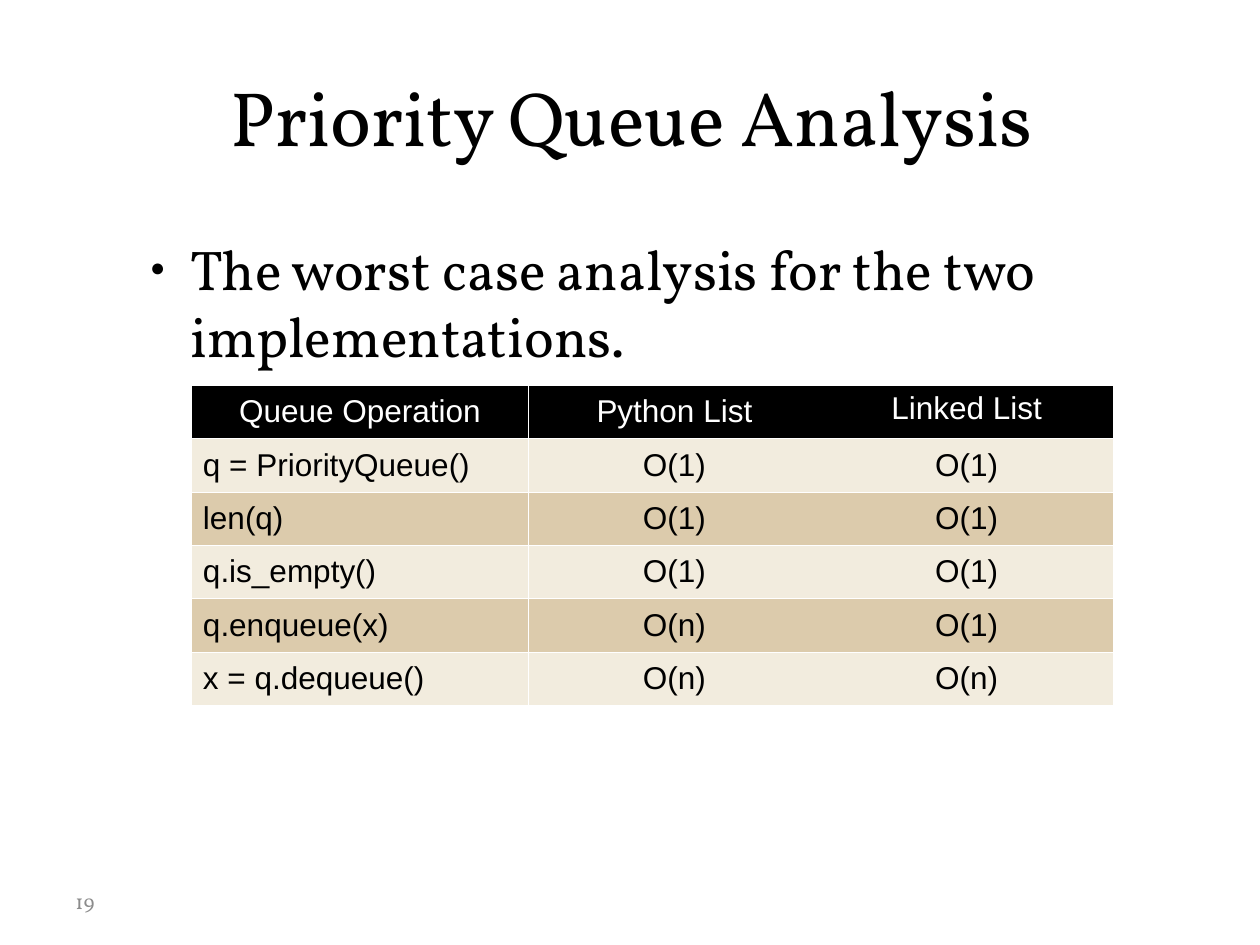
from lxml import etree
from pptx import Presentation
from pptx.dml.color import RGBColor
from pptx.enum import text
from pptx.oxml import ns
from pptx.util import Pt

BLACK = RGBColor(0x00, 0x00, 0x00)
WHITE = RGBColor(0xFF, 0xFF, 0xFF)
GREY = RGBColor(0x8C, 0x8C, 0x8C)
CREAM = RGBColor(0xF2, 0xEC, 0xDE)
TAN = RGBColor(0xDC, 0xCB, 0xAC)

OPERATIONS = [
    ("Queue Operation", "Python List", "Linked List"),
    ("q = PriorityQueue()", "O(1)", "O(1)"),
    ("len(q)", "O(1)", "O(1)"),
    ("q.is_empty()", "O(1)", "O(1)"),
    ("q.enqueue(x)", "O(n)", "O(1)"),
    ("x = q.dequeue()", "O(n)", "O(n)"),
]


def add_xml(parent, tag, **attributes):
    return etree.SubElement(parent, ns.qn(tag), attributes)


class SlideBuilder:
    serif = "Vollkorn"
    sans = "Arial"
    border_width = Pt(0.57)

    def __init__(self, slide):
        self.slide = slide

    def set_text(self, frame, words, size, font, color, align=text.PP_ALIGN.LEFT):
        frame.word_wrap = True
        paragraph = frame.paragraphs[0]
        paragraph.text = words
        paragraph.alignment = align
        paragraph.font.size = Pt(size)
        paragraph.font.name = font
        paragraph.font.color.rgb = color
        return paragraph

    def title(self, words, left, top, width, height):
        heading = self.slide.shapes.title
        heading.left, heading.top = Pt(left), Pt(top)
        heading.width, heading.height = Pt(width), Pt(height)
        frame = heading.text_frame
        frame.auto_size = text.MSO_AUTO_SIZE.NONE
        frame.vertical_anchor = text.MSO_ANCHOR.MIDDLE
        frame.margin_top = Pt(2.2)
        self.set_text(frame, words, 44, self.serif, BLACK, text.PP_ALIGN.CENTER)

    def text_box(self, words, left, top, width, height, size, color,
                 anchor=text.MSO_ANCHOR.TOP):
        box = self.slide.shapes.add_textbox(Pt(left), Pt(top), Pt(width), Pt(height))
        box.text_frame.vertical_anchor = anchor
        return self.set_text(box.text_frame, words, size, self.serif, color)

    def bullet(self, words, left, top, width, height):
        point = self.text_box(words, left, top, width, height, 32, BLACK)
        point.space_before = Pt(6.4)
        properties = point._p.get_or_add_pPr()
        properties.set("marL", str(Pt(31)))
        properties.set("indent", str(-Pt(23)))
        # Bullet elements must stand before the default run properties.
        run_defaults = properties.find(ns.qn("a:defRPr"))
        add_xml(properties, "a:buSzPct", val="45000")
        add_xml(properties, "a:buFont", typeface=self.sans)
        add_xml(properties, "a:buChar", char="●")
        if run_defaults is not None:
            properties.append(run_defaults)

    def borders(self, cell, column):
        """Rule every row, and only the edge between the first two columns."""
        visible = {"L": column < 2, "R": column == 0, "T": True, "B": True}
        properties = cell._tc.get_or_add_tcPr()
        for side, shown in visible.items():
            line = add_xml(properties, f"a:ln{side}", w=str(self.border_width))
            if shown:
                fill = add_xml(line, "a:solidFill")
                add_xml(fill, "a:srgbClr", val=str(WHITE))
            else:
                add_xml(line, "a:noFill")

    def table(self, rows, left, top, column_widths, row_height):
        grid = self.slide.shapes.add_table(
            len(rows), len(column_widths), Pt(left), Pt(top),
            Pt(sum(column_widths)), Pt(row_height * len(rows))).table
        grid.first_row = False  # the header is not bold
        for column, width in zip(grid.columns, column_widths):
            column.width = Pt(width)
        for r, row in enumerate(rows):
            grid.rows[r].height = Pt(row_height)
            header = r == 0
            for c, words in enumerate(row):
                cell = grid.cell(r, c)
                self.borders(cell, c)
                cell.fill.solid()
                cell.fill.fore_color.rgb = BLACK if header else (TAN, CREAM)[r % 2]
                cell.margin_left = cell.margin_right = Pt(6.5)
                cell.margin_top, cell.margin_bottom = Pt(5.6), Pt(4.3)
                cell.vertical_anchor = text.MSO_ANCHOR.MIDDLE
                centred = header or c > 0
                paragraph = self.set_text(
                    cell.text_frame, words, 18, self.sans,
                    WHITE if header else BLACK,
                    text.PP_ALIGN.CENTER if centred else text.PP_ALIGN.LEFT)
                paragraph.line_spacing = 0.93
        linked_list = grid.cell(0, 2)
        linked_list.vertical_anchor = text.MSO_ANCHOR.TOP
        linked_list.margin_top, linked_list.margin_bottom = Pt(4.3), Pt(3.6)


def main():
    deck = Presentation()
    deck.slide_width, deck.slide_height = Pt(720), Pt(540)
    builder = SlideBuilder(deck.slides.add_slide(deck.slide_layouts[5]))
    builder.text_box("19", 36, 500.4, 168, 28.8, 12, GREY, text.MSO_ANCHOR.MIDDLE)
    builder.title("Priority Queue Analysis", 36, 21.6, 650, 90)
    builder.table(OPERATIONS, 109.5, 220.2, (192.4, 167, 167), 30.5)
    builder.bullet("The worst case analysis for the two implementations.",
                   70.6, 130.3, 603.4, 356.4)
    deck.save("out.pptx")


if __name__ == "__main__":
    main()
